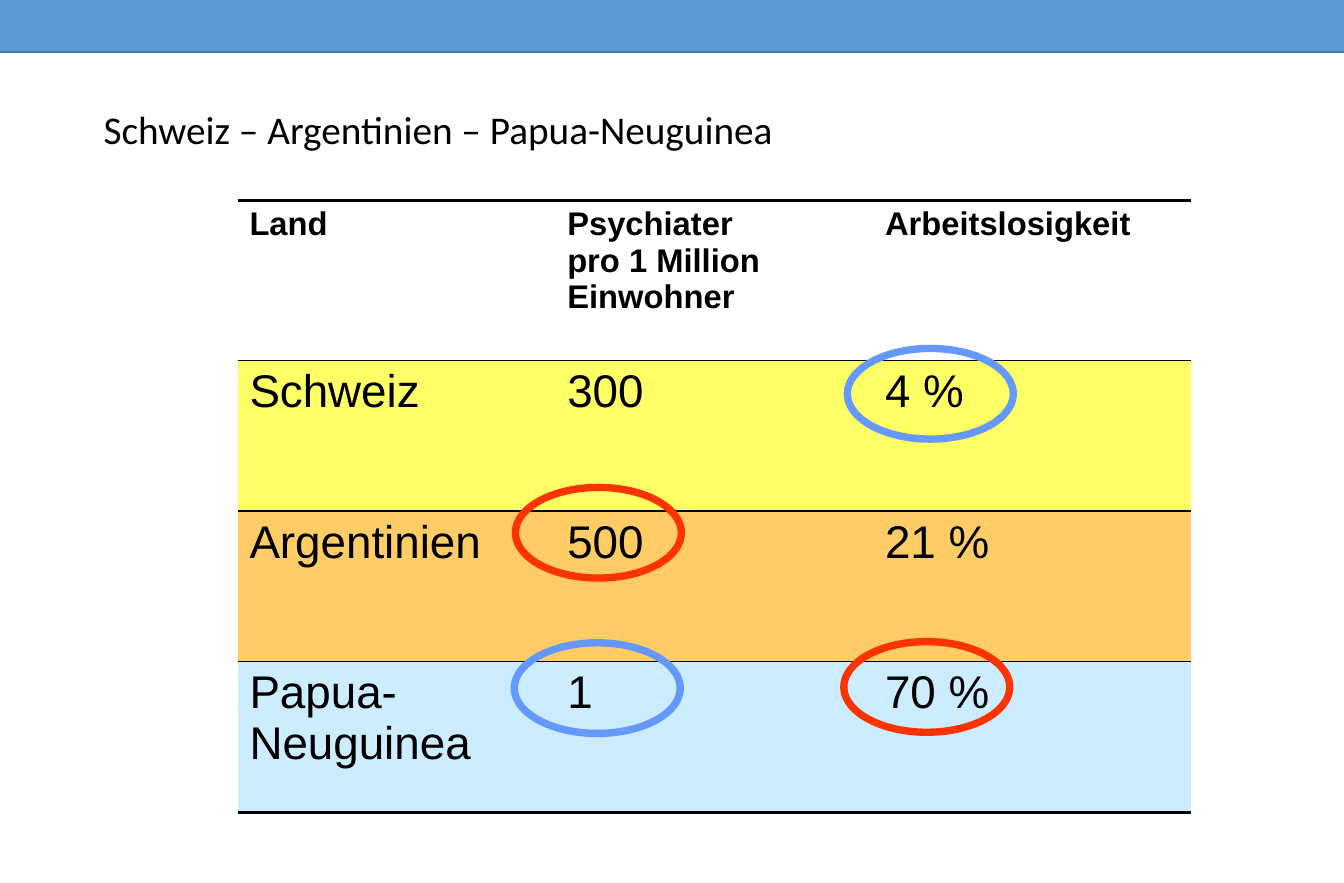
from dataclasses import dataclass

import lxml.etree
import pptx
import pptx.dml.color
import pptx.enum.shapes
import pptx.enum.text
import pptx.oxml.ns
import pptx.util

EMU_PER_PX = 9144  # 100 px to the inch


@dataclass(frozen=True)
class Theme:
    text: str = "000000"
    bar: str = "5B9BD5"
    bar_edge: str = "43739E"
    high: str = "FF3300"
    low: str = "6699FF"
    yellow: str = "FFFF66"
    orange: str = "FFCC66"
    pale_blue: str = "CCECFF"
    title_font: str = "Calibri"
    table_font: str = "Arial"
    title_size: int = 24
    header_size: int = 20
    body_size: int = 28
    thin_rule: float = 1
    thick_rule: float = 2.25
    ring_line: float = 4.5


@dataclass(frozen=True)
class CountryRow:
    cells: tuple[str, str, str]
    height: int
    fill: str | None
    size: int
    bold: bool = False


@dataclass(frozen=True)
class Ring:
    left: int
    top: int
    color: str


THEME = Theme()
RING_WIDTH, RING_HEIGHT = 141, 77
COLUMN_WIDTH = 270
BODY_HEIGHT = 128
ROWS = [
    CountryRow(("Land", "Psychiater\vpro 1 Million\vEinwohner", "Arbeitslosigkeit"),
               136, None, THEME.header_size, True),
    CountryRow(("Schweiz", "300", "4 %"), BODY_HEIGHT, THEME.yellow, THEME.body_size),
    CountryRow(("Argentinien", "500", "21 %"), BODY_HEIGHT, THEME.orange, THEME.body_size),
    CountryRow(("Papua-Neuguinea", "1", "70 %"), BODY_HEIGHT, THEME.pale_blue, THEME.body_size),
]
RULES = [THEME.thick_rule, *[THEME.thin_rule] * (len(ROWS) - 1), THEME.thick_rule]
RINGS = [
    Ring(438, 414, THEME.high),
    Ring(717, 545, THEME.high),
    Ring(720, 296, THEME.low),
    Ring(437, 546, THEME.low),
]


def px(length: int) -> pptx.util.Emu:
    return pptx.util.Emu(length * EMU_PER_PX)


def rgb(color: str) -> pptx.dml.color.RGBColor:
    return pptx.dml.color.RGBColor.from_string(color)


def set_font(para, name: str, size: int, bold: bool = False) -> None:
    formats = {"name": name, "size": pptx.util.Pt(size), "bold": bold}
    for span in para.runs:
        for key, value in formats.items():
            setattr(span.font, key, value)
        span.font.color.rgb = rgb(THEME.text)


def set_border(cell, side: str, points: float) -> None:
    """Draw one cell edge; zero points hides it."""
    qn = pptx.oxml.ns.qn
    properties = cell._tc.get_or_add_tcPr()
    edge = lxml.etree.SubElement(properties, qn(f"a:ln{side}"), w=str(pptx.util.Pt(points)))
    if points:
        fill = lxml.etree.SubElement(edge, qn("a:solidFill"))
        lxml.etree.SubElement(fill, qn("a:srgbClr"), val=THEME.text)
    else:
        lxml.etree.SubElement(edge, qn("a:noFill"))


def add_outlined(page, kind, left: int, top: int, width: int, height: int,
                 line: str, points: float, fill: str | None = None) -> None:
    shape = page.shapes.add_shape(kind, px(left), px(top), px(width), px(height))
    shape.shadow.inherit = False
    shape.line.color.rgb = rgb(line)
    shape.line.width = pptx.util.Pt(points)
    if fill:
        shape.fill.solid()
        shape.fill.fore_color.rgb = rgb(fill)
    else:
        shape.fill.background()


def set_title(page, text: str) -> None:
    title = page.shapes.title
    frame = {"left": px(78), "top": px(58), "width": px(985), "height": px(108)}
    for key, value in frame.items():
        setattr(title, key, value)
    title.text_frame.text = text
    title.text_frame.vertical_anchor = pptx.enum.text.MSO_ANCHOR.MIDDLE
    para = title.text_frame.paragraphs[0]
    para.alignment = pptx.enum.text.PP_ALIGN.LEFT
    para.line_spacing = 0.9
    set_font(para, THEME.title_font, THEME.title_size)


def add_country_table(page, rows: list[CountryRow]) -> None:
    columns = len(rows[0].cells)
    height = sum(row.height for row in rows)
    table = page.shapes.add_table(len(rows), columns, px(202), px(170),
                                  px(columns * COLUMN_WIDTH), px(height)).table
    table.first_row = table.horz_banding = False
    for column in table.columns:
        column.width = px(COLUMN_WIDTH)
    for index, row in enumerate(rows):
        table.rows[index].height = px(row.height)
        borders = {"L": 0, "R": 0, "T": RULES[index], "B": RULES[index + 1]}
        for number, text in enumerate(row.cells):
            cell = table.cell(index, number)
            cell.text = text
            set_font(cell.text_frame.paragraphs[0], THEME.table_font, row.size, row.bold)
            for side, points in borders.items():
                set_border(cell, side, points)
            if row.fill:
                cell.fill.solid()
                cell.fill.fore_color.rgb = rgb(row.fill)
            else:
                cell.fill.background()


def main() -> None:
    deck = pptx.Presentation()
    deck.slide_width, deck.slide_height = px(1142), px(750)
    page = deck.slides.add_slide(deck.slide_layouts.get_by_name("Title Only"))
    kinds = pptx.enum.shapes.MSO_SHAPE
    add_outlined(page, kinds.RECTANGLE, -36, -14, 1229, 58, THEME.bar_edge, 1, THEME.bar)
    set_title(page, "Schweiz – Argentinien – Papua-Neuguinea")
    add_country_table(page, ROWS)
    for ring in RINGS:
        add_outlined(page, kinds.OVAL, ring.left, ring.top, RING_WIDTH, RING_HEIGHT,
                     ring.color, THEME.ring_line)
    deck.save("out.pptx")


if __name__ == "__main__":
    main()
